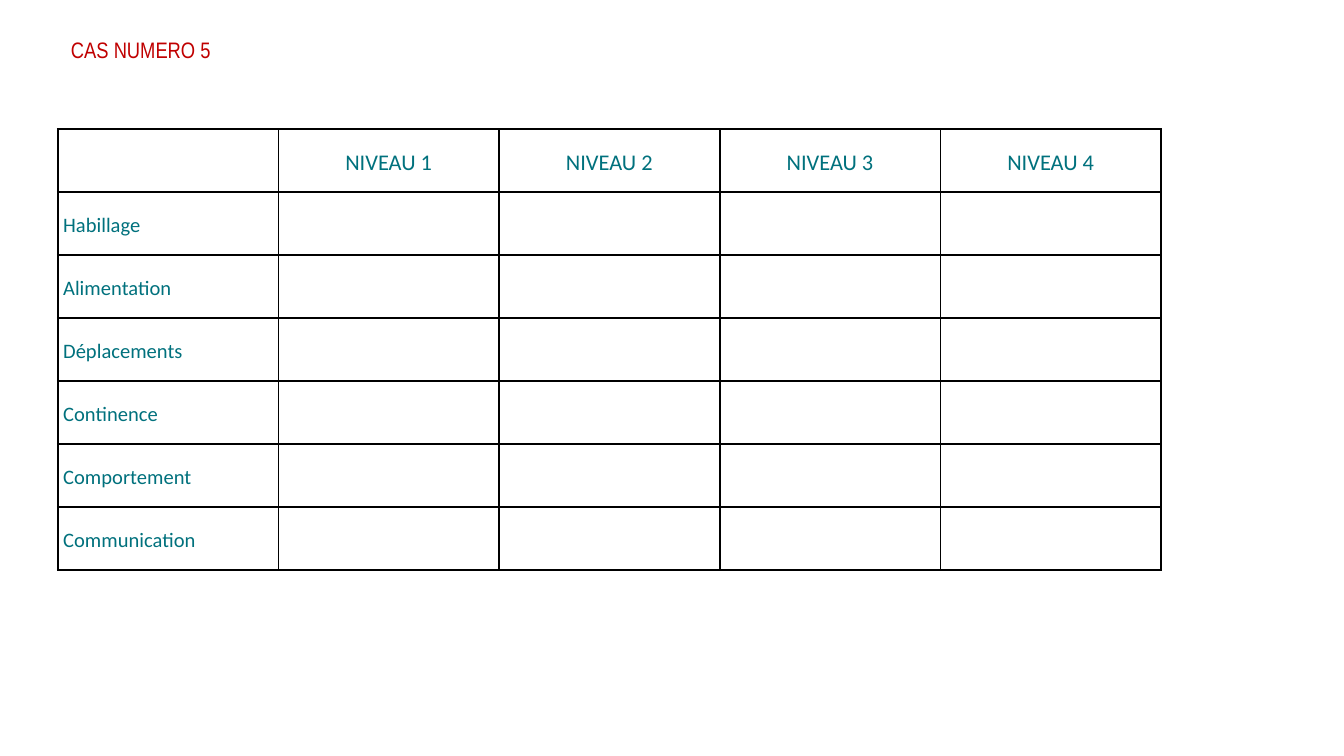
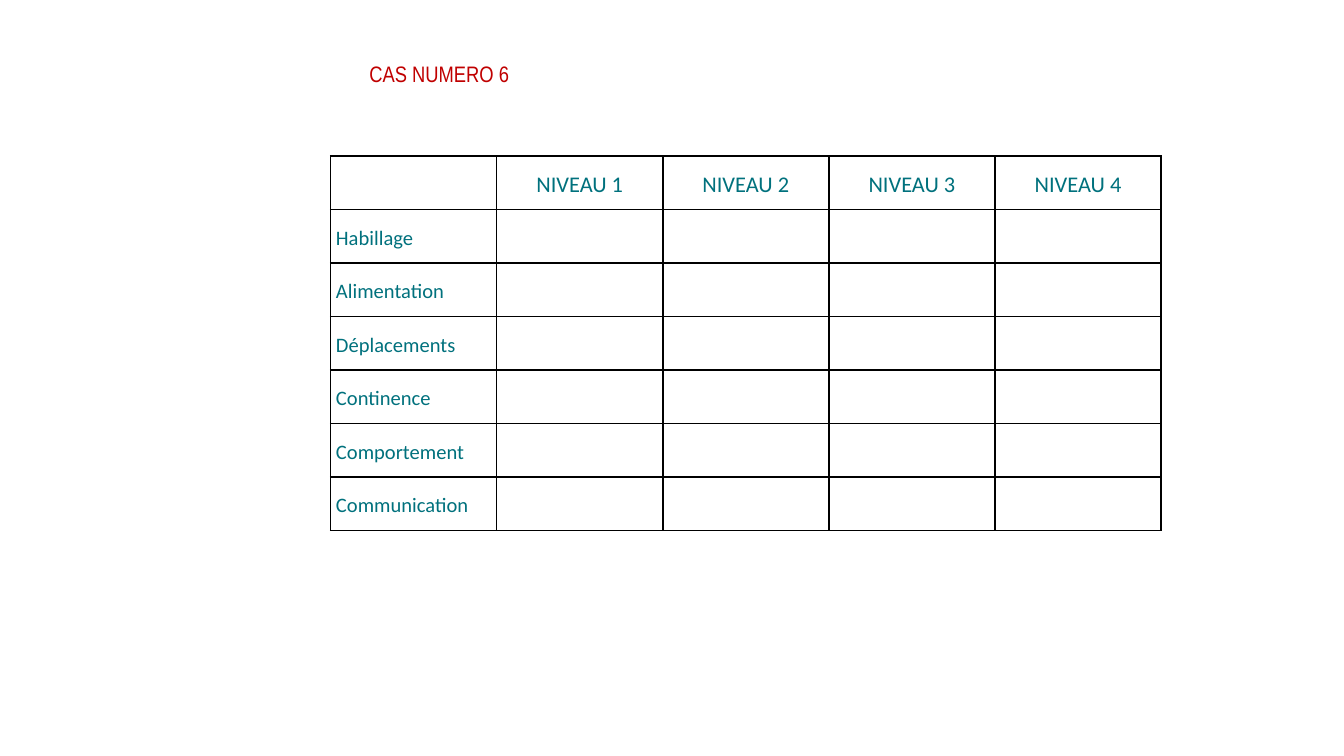
from lxml import etree
from pptx import Presentation
from pptx.dml.color import RGBColor
from pptx.enum import text
from pptx.oxml import ns
from pptx.util import Inches, Pt

COLOURS = {"title": "C00000", "label": "00717D", "border": "000000"}
LEVELS = ["NIVEAU 1", "NIVEAU 2", "NIVEAU 3", "NIVEAU 4"]
ABILITIES = ["Habillage", "Alimentation", "Déplacements",
             "Continence", "Comportement", "Communication"]

# Case title, title position, then grid left, top, width and height
CASES = [
    ("CAS NUMERO 5", (0.43, 0.17), (0.43, 0.96, 8.21, 3.28)),
    ("CAS NUMERO 6", (2.65, 0.35), (2.46, 1.16, 6.18, 2.79)),
]


def set_font(paragraph, name, size, colour):
    paragraph.font.name = name
    paragraph.font.size = Pt(size)
    paragraph.font.color.rgb = RGBColor.from_string(COLOURS[colour])


def add_borders(cell):
    properties = cell._tc.get_or_add_tcPr()
    for position, side in enumerate(("lnL", "lnR", "lnT", "lnB")):
        line = etree.Element(ns.qn(f"a:{side}"), w=str(Pt(1)))
        fill = etree.SubElement(line, ns.qn("a:solidFill"))
        etree.SubElement(fill, ns.qn("a:srgbClr"), val=COLOURS["border"])
        properties.insert(position, line)


# Widescreen, 16:9
prs = Presentation()
prs.slide_width = Inches(10)
prs.slide_height = Inches(10) * 9 // 16

for case, (title_left, title_top), grid_box in CASES:
    slide = prs.slides.add_slide(prs.slide_layouts[6])

    # Case title
    heading = slide.shapes.add_textbox(
        Inches(title_left), Inches(title_top), Inches(3.34), Inches(0.34)).text_frame
    heading.word_wrap = True
    heading.margin_left = heading.margin_right = Inches(0.1)
    heading.margin_top = heading.margin_bottom = Inches(0.1)
    heading.text = case
    set_font(heading.paragraphs[0], "Arial Narrow", 12, "title")

    # Assessment grid: abilities down, levels across
    grid = slide.shapes.add_table(
        len(ABILITIES) + 1, len(LEVELS) + 1, *map(Inches, grid_box)).table
    grid.first_row = grid.horz_banding = False
    for cell in grid.iter_cells():
        cell.fill.background()
        cell.vertical_anchor = text.MSO_ANCHOR.MIDDLE
        cell.margin_left = cell.margin_right = Inches(0.04)
        cell.margin_top = cell.margin_bottom = 0
        add_borders(cell)

    # Row and column labels
    labels = [(0, column, level, 12, text.PP_ALIGN.CENTER)
              for column, level in enumerate(LEVELS, 1)]
    labels += [(row, 0, ability, 11, text.PP_ALIGN.LEFT)
               for row, ability in enumerate(ABILITIES, 1)]
    for row, column, label, size, alignment in labels:
        cell = grid.cell(row, column)
        cell.text = label
        paragraph = cell.text_frame.paragraphs[0]
        paragraph.alignment = alignment
        paragraph.line_spacing = 1.15
        paragraph.space_after = Pt(10)
        set_font(paragraph, "Calibri", size, "label")

prs.save("out.pptx")
